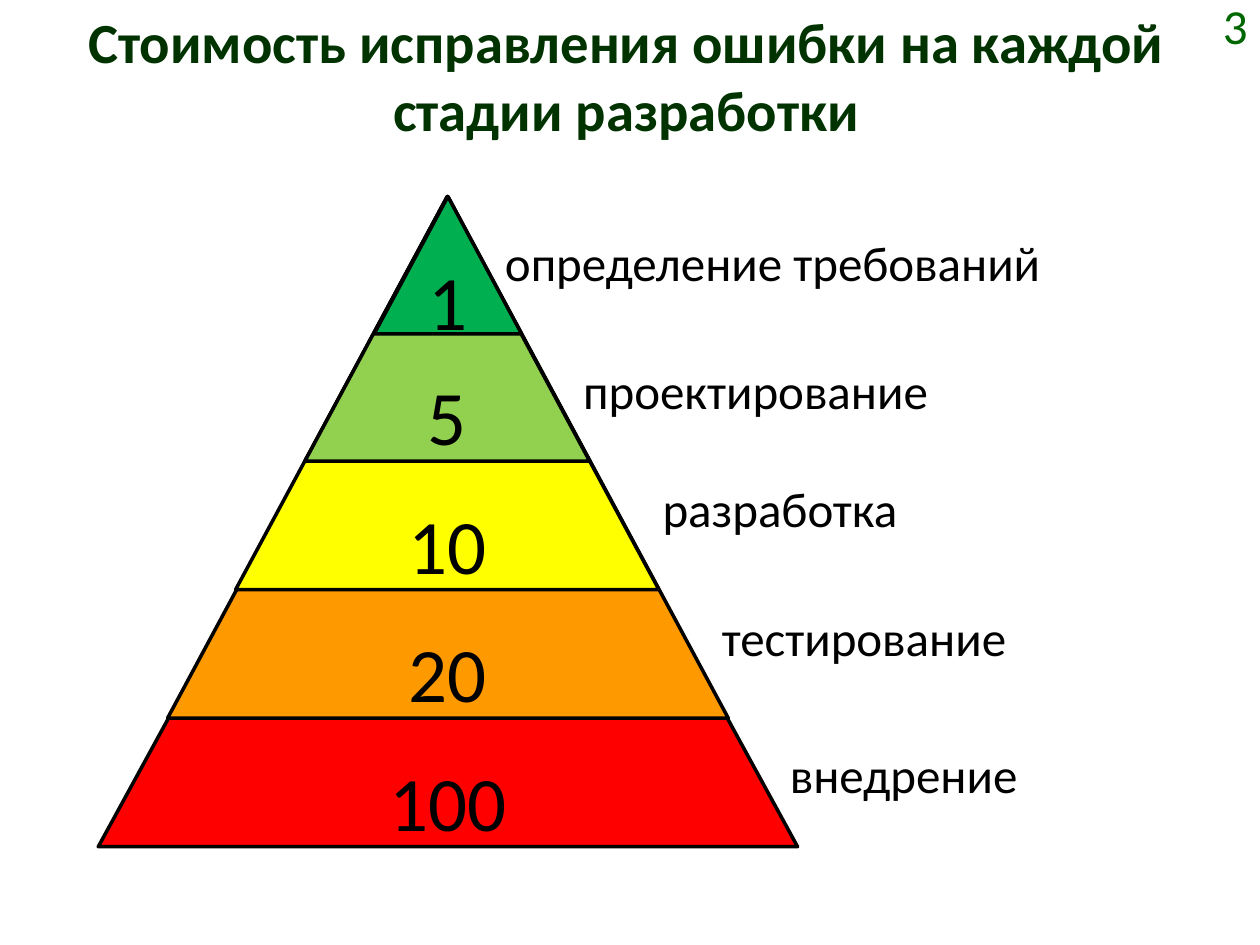
"""Build the slide on the cost of fixing an error at each development stage."""
from pptx import Presentation
from pptx.dml.color import RGBColor
from pptx.enum.shapes import MSO_SHAPE
from pptx.enum.text import MSO_ANCHOR, MSO_AUTO_SIZE, PP_ALIGN
from pptx.util import Pt

PX = 9144
THEME = {
    "font": "Calibri", "ink": "000000", "title": "003300", "number": "006600",
    "title_size": 32.4, "cost_size": 44, "label_size": 28, "line": 2,
}


def place(shape, x, y, w, h):
    for name, value in {"left": x, "top": y, "width": w, "height": h}.items():
        setattr(shape, name, value * PX)


def write(shape, text, size, color, align, anchor, bold=False, inset=None, before=0):
    tf = shape.text_frame
    frame = {"word_wrap": True, "auto_size": MSO_AUTO_SIZE.NONE, "vertical_anchor": anchor}
    if inset is not None:
        frame.update({f"margin_{side}": inset for side in ("left", "top", "right", "bottom")})
    for name, value in frame.items():
        setattr(tf, name, value)
    p = tf.paragraphs[0]
    p.alignment, p.space_before = align, Pt(before)
    r = p.add_run()
    r.text = text
    for name, value in {"name": THEME["font"], "size": Pt(size), "bold": bold}.items():
        setattr(r.font, name, value)
    r.font.color.rgb = RGBColor.from_string(color)


prs = Presentation()
prs.slide_width, prs.slide_height = 1000 * PX, 750 * PX
s = prs.slides.add_slide(prs.slide_layouts[5])

title = s.shapes.title
place(title, 47, 0, 900, 94)
write(title, "Стоимость исправления ошибки на каждой стадии разработки",
      THEME["title_size"], THEME["title"], PP_ALIGN.CENTER, MSO_ANCHOR.TOP, bold=True)

number = s.shapes.add_textbox(0, 0, 0, 0)
place(number, 898, 0, 102, 39)
write(number, "3", THEME["label_size"], THEME["number"], PP_ALIGN.RIGHT, MSO_ANCHOR.MIDDLE)

# cost, fill, apex, anchor, stage, label left, label top
stages = [
    ("1", "00B050", 156, MSO_ANCHOR.MIDDLE, "определение требований", 391, 180),
    ("5", "92D050", 156, MSO_ANCHOR.BOTTOM, "проектирование", 453, 281),
    ("10", "FFFF00", 156, MSO_ANCHOR.BOTTOM, "разработка", 516, 375),
    ("20", "FF9900", 156, MSO_ANCHOR.BOTTOM, "тестирование", 563, 477),
    ("100", "FF0000", 164, MSO_ANCHOR.BOTTOM, "внедрение", 617, 586),
]
for i, (cost, fill, apex, anchor, stage, x, y) in reversed(list(enumerate(stages))):
    w = 117 + 219 * i // 2
    bottom = 265 + 407 * i // 4
    sp = s.shapes.add_shape(MSO_SHAPE.ISOSCELES_TRIANGLE, 0, 0, 0, 0)
    place(sp, 355 - w // 2, apex, w, bottom - apex)
    sp.shadow.inherit = False
    sp.fill.solid()
    sp.fill.fore_color.rgb = RGBColor.from_string(fill)
    sp.line.color.rgb = RGBColor.from_string(THEME["ink"])
    sp.line.width = Pt(THEME["line"])
    write(sp, cost, THEME["cost_size"], THEME["ink"], PP_ALIGN.CENTER, anchor, inset=0)

    label = s.shapes.add_textbox(0, 0, 0, 0)
    place(label, x, y, 484 if i == 0 else 359, 57)
    write(label, stage, THEME["label_size"], THEME["ink"], PP_ALIGN.JUSTIFY,
          MSO_ANCHOR.TOP, before=12)

prs.save("out.pptx")
